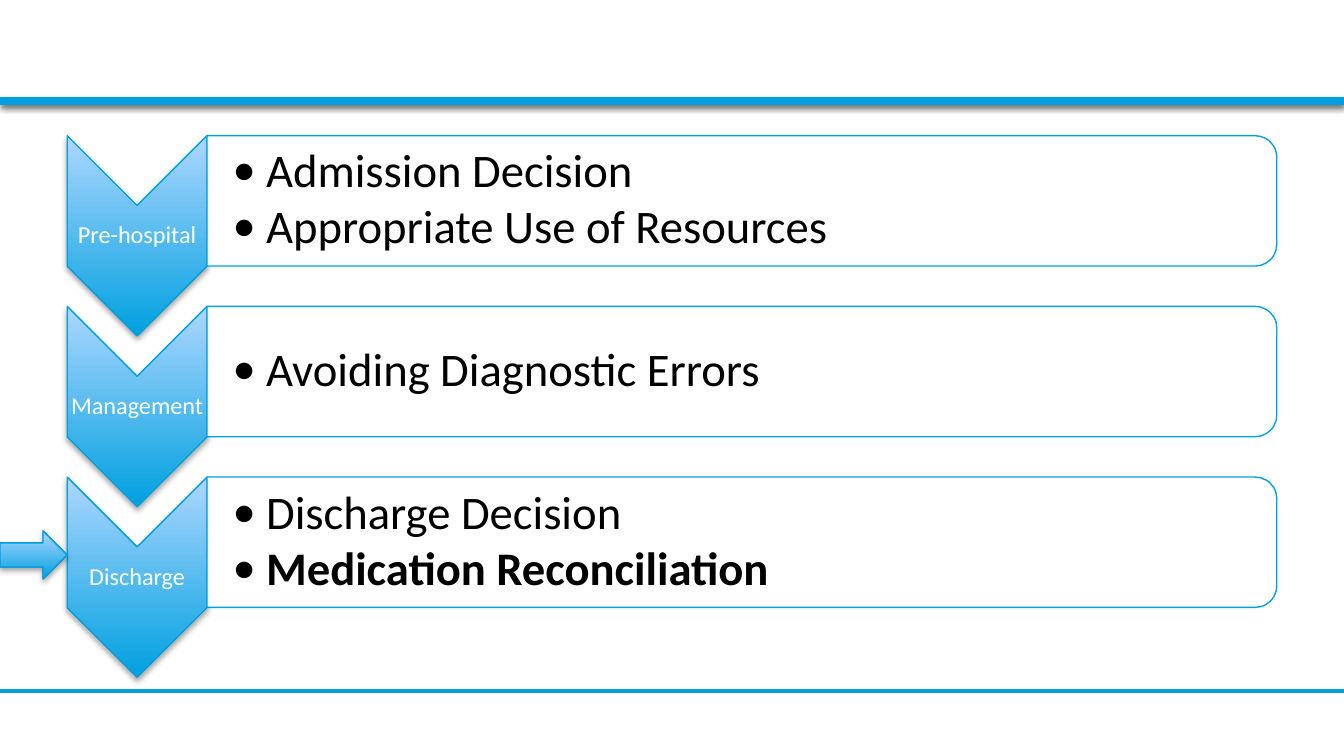
from dataclasses import dataclass
from lxml.etree import SubElement
from pptx import Presentation
from pptx.dml.color import RGBColor
from pptx.enum.shapes import MSO_CONNECTOR, MSO_SHAPE
from pptx.enum.text import MSO_ANCHOR, PP_ALIGN
from pptx.oxml.ns import qn
from pptx.util import Inches, Pt


@dataclass(frozen=True)
class Theme:
    blue: str = "00A0DF"
    edge: str = "009CDA"
    pale: str = "ADD7FF"
    white: str = "FFFFFF"
    black: str = "000000"
    font: str = "Calibri"
    label: int = 13
    body: int = 25
    thin: float = 0.75
    rule: float = 2
    bar: float = 4.5


THEME = Theme()
WIDE = 10
HIGH = WIDE * 9 / 16
STEPS = [
    ("Pre-hospital", [("Admission Decision", False),
                      ("Appropriate Use of Resources", False)]),
    ("Management", [("Avoiding Diagnostic Errors", False)]),
    ("Discharge", [("Discharge Decision", False),
                   ("Medication Reconciliation", True)]),
]


def color(code):
    return RGBColor.from_string(code)


def add_shadow(shape, alpha=35, drop=1.8):
    """Replace the shape's effects with a soft shadow straight below it."""
    props = shape._element.spPr
    for old in props.findall(qn("a:effectLst")):
        props.remove(old)
    glow = SubElement(SubElement(props, qn("a:effectLst")), qn("a:outerShdw"),
                      blurRad=str(Pt(3.1)), dist=str(Pt(drop)),
                      dir="5400000", rotWithShape="0")
    tone = SubElement(glow, qn("a:srgbClr"), val=THEME.black)
    SubElement(tone, qn("a:alpha"), val=str(alpha * 1000))


def add_block(slide, kind, box, turn=0):
    """Add a shape that covers box once turned by 0 or 90 degrees."""
    left, top, width, height = box
    if turn:
        left, top = left + (width - height) / 2, top + (height - width) / 2
        width, height = height, width
    shape = slide.shapes.add_shape(
        kind, *(Inches(n) for n in (left, top, width, height)))
    shape.rotation = turn
    shape.shadow.inherit = False
    return shape


def set_line(item, tone, width):
    item.line.color.rgb = color(tone)
    item.line.width = Pt(width)


def add_glossy(slide, kind, box, edge, turn=0):
    """Add a shape shaded from pale at the top to blue at the bottom."""
    shape = add_block(slide, kind, box, turn)
    shape.fill.gradient()
    shape.fill.gradient_angle = 90
    for stop, tone in zip(shape.fill.gradient_stops, (THEME.blue, THEME.pale)):
        stop.color.rgb = color(tone)
    shape._element.spPr.find(qn("a:gradFill")).set("rotWithShape", "0")
    set_line(shape, edge, THEME.thin)
    add_shadow(shape)


def add_frame(slide, box, inset, pad):
    """Add a wrapped, vertically centred text box and return its frame."""
    frame = slide.shapes.add_textbox(*(Inches(n) for n in box)).text_frame
    frame.word_wrap = True
    frame.vertical_anchor = MSO_ANCHOR.MIDDLE
    frame.margin_left = Inches(inset)
    frame.margin_right = frame.margin_top = frame.margin_bottom = Inches(pad)
    return frame


def add_run(para, text, size, tone, bold=False):
    run = para.add_run()
    run.text = text
    run.font.name = THEME.font
    run.font.size = Pt(size)
    run.font.bold = bold
    run.font.color.rgb = color(tone)


def add_bullet(para):
    para.level = 1
    props = para._p.get_or_add_pPr()
    props.set("marL", str(Inches(0.25)))
    props.set("indent", str(-Inches(0.25)))
    SubElement(props, qn("a:buFont"), typeface=THEME.font)
    SubElement(props, qn("a:buChar"), char="•")


def add_rule(slide, y, width):
    rule = slide.shapes.add_connector(
        MSO_CONNECTOR.STRAIGHT, 0, Inches(y), Inches(WIDE), Inches(y))
    set_line(rule, THEME.blue, width)
    SubElement(rule._element.spPr, qn("a:effectLst"))
    return rule


def add_bands(slide):
    """Place the header band and the rules above and below the content."""
    band = add_block(slide, MSO_SHAPE.RECTANGLE, (0, 0, WIDE, 0.77))
    band.fill.solid()
    band.fill.fore_color.rgb = color(THEME.white)
    band.line.fill.background()
    add_shadow(band)
    add_rule(slide, 5.14, THEME.rule)
    add_shadow(add_rule(slide, 0.75, THEME.bar), 38, 1.6)


def add_label(slide, text, box):
    left, top, width, height = box
    add_glossy(slide, MSO_SHAPE.CHEVRON, box, THEME.blue, 90)
    notch = width / 2
    frame = add_frame(slide, (left, top + notch, width, height - 2 * notch),
                      0.01, 0.01)
    para = frame.paragraphs[0]
    para.alignment = PP_ALIGN.CENTER
    para.line_spacing = 0.9
    add_run(para, text, THEME.label, THEME.white)


def add_panel(slide, points, box):
    left, top, width, height = box
    panel = add_block(slide, MSO_SHAPE.ROUND_2_SAME_RECTANGLE, box, 90)
    panel.fill.solid()
    panel.fill.fore_color.rgb = color(THEME.white)
    tone = panel._element.spPr.find(qn("a:solidFill"))[0]
    SubElement(tone, qn("a:alpha"), val="90000")
    set_line(panel, THEME.blue, THEME.thin)
    frame = add_frame(slide, (left, top + 0.05, width - 0.05, height - 0.1),
                      0.19, 0.02)
    for i, (text, bold) in enumerate(points):
        para = frame.add_paragraph() if i else frame.paragraphs[0]
        para.line_spacing = 0.9
        para.space_after = Pt(3)
        add_bullet(para)
        add_run(para, text, THEME.body, THEME.black, bold)


def add_steps(slide, box):
    """Stack the steps; each chevron tip reaches into the row below."""
    left, top, width, height = box
    tag, tall, deep = 1.04, 1.49, 0.97
    pitch = (height - tall) / (len(STEPS) - 1)
    for i, (name, points) in enumerate(STEPS):
        y = top + i * pitch
        add_label(slide, name, (left, y, tag, tall))
        add_panel(slide, points, (left + tag, y, width - tag, deep))


def main():
    deck = Presentation()
    deck.slide_width, deck.slide_height = Inches(WIDE), Inches(HIGH)
    slide = deck.slides.add_slide(deck.slide_layouts[6])
    add_bands(slide)
    add_steps(slide, (0.5, 1.01, 9, 4.03))
    add_glossy(slide, MSO_SHAPE.RIGHT_ARROW, (0, 3.95, 0.5, 0.36), THEME.edge)
    deck.save("out.pptx")


if __name__ == "__main__":
    main()
